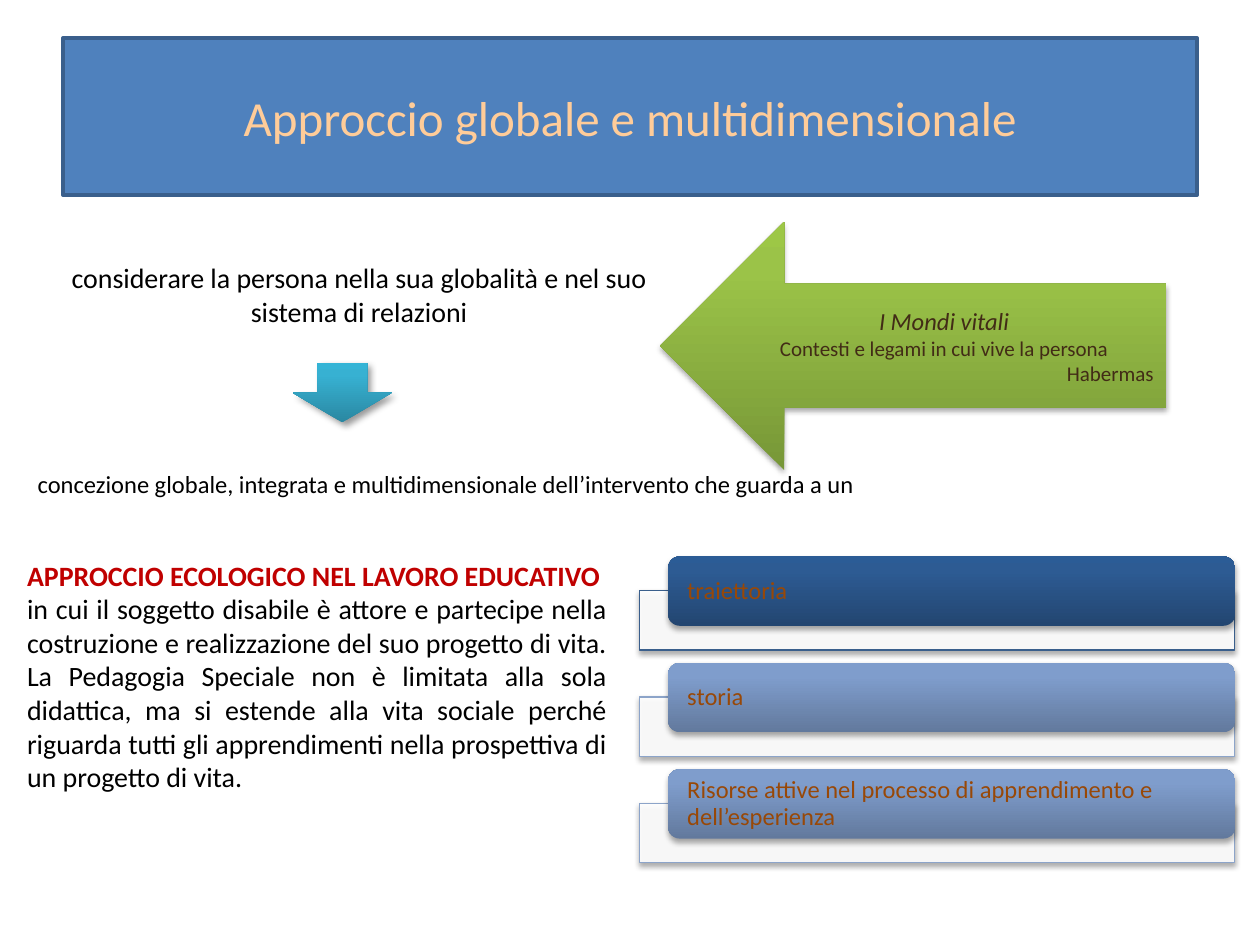
from dataclasses import dataclass
import pptx
import pptx.util
import pptx.dml.color
import pptx.enum.shapes
import pptx.enum.text
import pptx.oxml
import pptx.oxml.ns

Pt = pptx.util.Pt
Align = pptx.enum.text.PP_ALIGN
Anchor = pptx.enum.text.MSO_ANCHOR
Shape = pptx.enum.shapes.MSO_SHAPE
FONT = "Calibri"
COLORS = {
    "title_fill": "4F81BD", "title_line": "3A5F8C", "title_text": "FFCC99",
    "arrow_text": "422C16", "bar_text": "984807", "heading": "C00000",
    "pale_line": "8CA4C9", "black": "000000", "white": "FFFFFF",
}
GRADIENTS = {
    "green": ("779737", "9BC348", "9DC746"),
    "teal": ("2A88A2", "37B1D2", "34B4D6"),
    "navy": ("234671", "2D5B93", "2B5C96"),
    "slate": ("62799D", "7F9DCC", "7E9DCE"),
}


@dataclass(frozen=True)
class Area:
    left: float
    top: float
    width: float
    height: float

    def lengths(self) -> tuple:
        return Pt(self.left), Pt(self.top), Pt(self.width), Pt(self.height)


@dataclass(frozen=True)
class Shadow:
    alpha: int = 35
    blur: float = 3.1
    distance: float = 1.8
    angle: int = 90


@dataclass(frozen=True)
class Resource:
    text: str
    gradient: str
    line: str


RESOURCES = (
    Resource("traiettoria", "navy", "title_line"),
    Resource("storia", "slate", "pale_line"),
    Resource("Risorse attive nel processo di apprendimento e dell’esperienza", "slate", "pale_line"),
)


def rgb(name: str):
    return pptx.dml.color.RGBColor.from_string(COLORS[name])


def element(xml: str):
    tag, rest = xml.split(" ", 1)
    return pptx.oxml.parse_xml(f"<{tag} {pptx.oxml.ns.nsdecls('a')} {rest}")


def add_text(frame, text: str, *, size: float, color: str = "black", align=Align.LEFT,
             bold: bool = False, italic: bool = False, spacing: float = 1.0) -> None:
    para = frame.paragraphs[0] if not frame.text else frame.add_paragraph()
    para.alignment = align
    para.line_spacing = spacing
    span = para.add_run()
    span.text = text
    span.font.name = FONT
    span.font.size = Pt(size)
    span.font.bold = bold
    span.font.italic = italic
    span.font.color.rgb = rgb(color)


def add_box(page, area: Area):
    frame = page.shapes.add_textbox(*area.lengths()).text_frame
    frame.word_wrap = True
    return frame


def add_raised_shape(page, kind, area: Area, shadow: Shadow = Shadow()):
    shape = page.shapes.add_shape(kind, *area.lengths())
    shape.fill.solid()
    shape.fill.fore_color.rgb = rgb("white")
    shape.line.fill.background()
    shape.shadow.inherit = False
    effects = shape._element.spPr.find(pptx.oxml.ns.qn("a:effectLst"))
    effects.append(element(
        f'a:outerShdw blurRad="{Pt(shadow.blur)}" dist="{Pt(shadow.distance)}" '
        f'dir="{shadow.angle * 60000}" rotWithShape="0"><a:srgbClr val="{COLORS["black"]}">'
        f'<a:alpha val="{shadow.alpha * 1000}"/></a:srgbClr></a:outerShdw>'))
    return shape


def add_gradient_shape(page, kind, area: Area, gradient: str, shadow: Shadow = Shadow()):
    shape = add_raised_shape(page, kind, area, shadow)
    stops = "".join(f'<a:gs pos="{place * 1000}"><a:srgbClr val="{color}"/></a:gs>'
                    for place, color in zip((0, 80, 100), GRADIENTS[gradient]))
    properties = shape._element.spPr
    properties.replace(
        properties.find(pptx.oxml.ns.qn("a:solidFill")),
        element(f'a:gradFill rotWithShape="1"><a:gsLst>{stops}</a:gsLst>'
                '<a:lin ang="16200000" scaled="0"/></a:gradFill>'))
    return shape


def add_resource(page, resource: Resource, top: float) -> None:
    panel = add_raised_shape(page, Shape.RECTANGLE, Area(365.6, top + 19.4, 340, 34))
    panel.line.color.rgb = rgb(resource.line)
    panel.line.width = Pt(0.75)
    white = panel._element.spPr.find(pptx.oxml.ns.qn("a:solidFill"))[0]
    white.append(element('a:alpha val="90000"/>'))
    bar = add_gradient_shape(page, Shape.ROUNDED_RECTANGLE, Area(381.8, top, 324, 39.6),
                             resource.gradient)
    frame = bar.text_frame
    frame.word_wrap = True
    frame.vertical_anchor = Anchor.MIDDLE
    frame.margin_left = frame.margin_right = Pt(9)
    frame.margin_top = frame.margin_bottom = 0
    add_text(frame, resource.text, size=14, color="bar_text", spacing=0.9)


def add_title(page) -> None:
    title = page.shapes.title
    title.left, title.top, title.width, title.height = Area(36, 21.6, 648, 90).lengths()
    title.fill.solid()
    title.fill.fore_color.rgb = rgb("title_fill")
    title.line.color.rgb = rgb("title_line")
    title.line.width = Pt(2)
    title.text_frame.vertical_anchor = Anchor.MIDDLE
    add_text(title.text_frame, "Approccio globale e multidimensionale", size=28,
             color="title_text", align=Align.CENTER)


def main() -> None:
    deck = pptx.Presentation()
    deck.slide_width, deck.slide_height = Pt(720), Pt(540)
    page = deck.slides.add_slide(deck.slide_layouts[5])
    add_title(page)

    worlds = add_gradient_shape(page, Shape.LEFT_ARROW, Area(377.2, 126.8, 289.2, 141.8), "green")
    frame = worlds.text_frame
    frame.word_wrap = True
    frame.vertical_anchor = Anchor.MIDDLE
    add_text(frame, "I Mondi vitali", size=14, color="arrow_text", align=Align.CENTER, italic=True)
    add_text(frame, "Contesti e legami in cui vive la persona", size=12, color="arrow_text",
             align=Align.CENTER)
    add_text(frame, "Habermas", size=12, color="arrow_text", align=Align.RIGHT)

    person = add_box(page, Area(25.2, 145.4, 360, 46))
    add_text(person, "considerare la persona nella sua globalità e nel suo sistema di relazioni",
             size=16, align=Align.CENTER)
    add_gradient_shape(page, Shape.DOWN_ARROW, Area(167.2, 207.4, 56.8, 34), "teal",
                       Shadow(40, 4, 3, 45))
    concept = add_box(page, Area(14.4, 264.2, 686, 24.4))
    add_text(concept, "concezione globale, integrata e multidimensionale dell’intervento "
             "che guarda a un", size=14)

    for index, resource in enumerate(RESOURCES):
        add_resource(page, resource, 318 + index * 60.8)

    approach = add_box(page, Area(8.4, 315.4, 345.6, 181.4))
    add_text(approach, "APPROCCIO ECOLOGICO NEL LAVORO EDUCATIVO", size=16, color="heading",
             align=Align.JUSTIFY, bold=True)
    add_text(approach, "in cui il soggetto disabile è attore e partecipe nella costruzione e "
             "realizzazione del suo progetto di vita. La Pedagogia Speciale non è limitata alla "
             "sola didattica, ma si estende alla vita sociale perché riguarda tutti gli "
             "apprendimenti nella prospettiva di un progetto di vita.",
             size=16, align=Align.JUSTIFY)
    deck.save("out.pptx")


if __name__ == "__main__":
    main()
